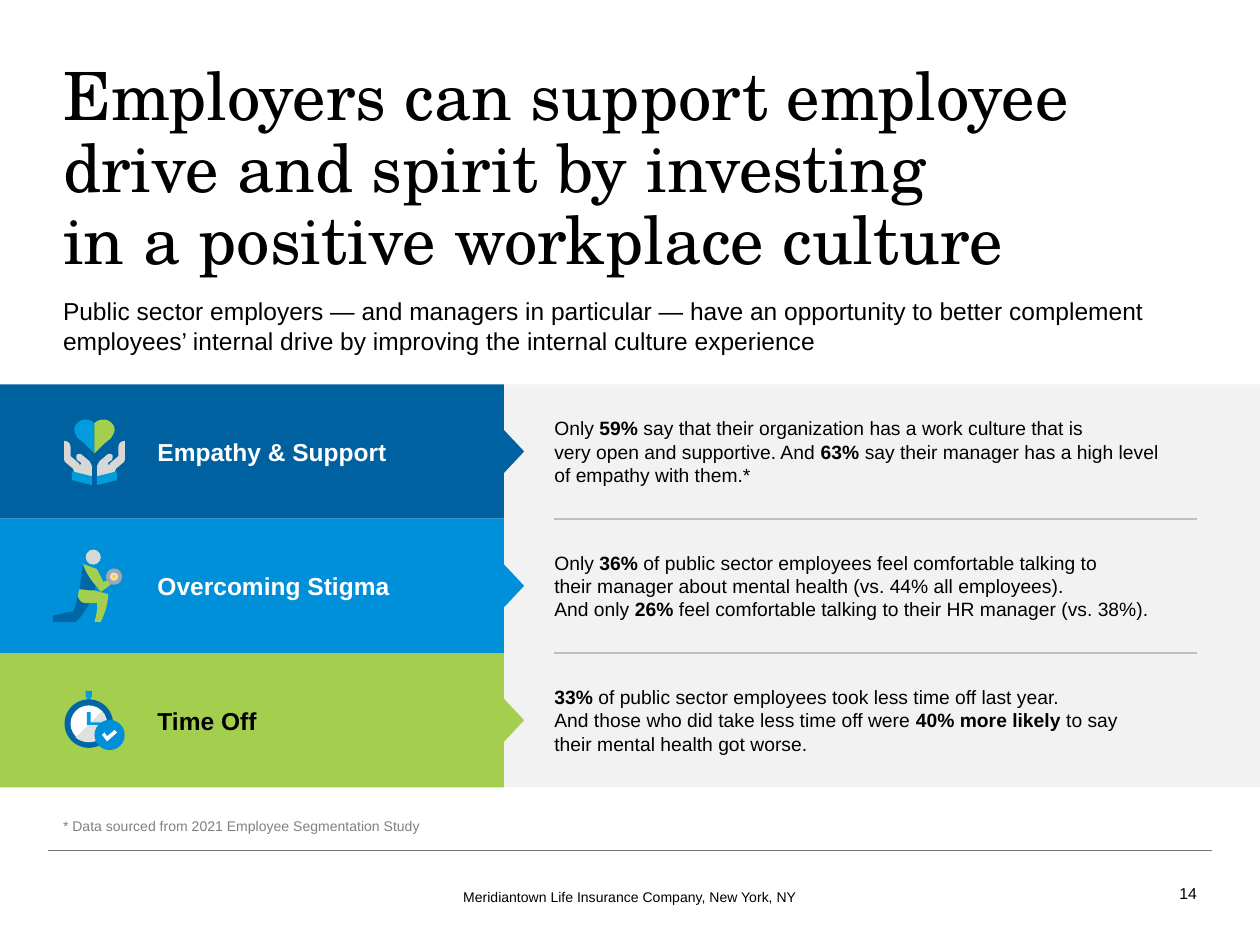
from copy import deepcopy

from pptx import Presentation
from pptx.dml.color import RGBColor
from pptx.enum.shapes import MSO_CONNECTOR, MSO_SHAPE
from pptx.enum.text import MSO_ANCHOR, MSO_AUTO_SIZE, PP_ALIGN
from pptx.oxml.ns import qn
from pptx.util import Inches, Pt

RECTANGLE, TRIANGLE, OVAL = MSO_SHAPE.RECTANGLE, MSO_SHAPE.ISOSCELES_TRIANGLE, MSO_SHAPE.OVAL
TOP, MIDDLE, BOTTOM = MSO_ANCHOR.TOP, MSO_ANCHOR.MIDDLE, MSO_ANCHOR.BOTTOM
LEFT, CENTER, RIGHT = PP_ALIGN.LEFT, PP_ALIGN.CENTER, PP_ALIGN.RIGHT

BLACK, WHITE = RGBColor(0, 0, 0), RGBColor(255, 255, 255)
NAVY, BLUE, GREEN = RGBColor(0, 0x61, 0xA0), RGBColor(0, 0x90, 0xDA), RGBColor(0xA4, 0xCE, 0x4E)
ICON_NAVY, ICON_SKY = RGBColor(0, 0x66, 0xA6), RGBColor(0, 0x9C, 0xDC)
SILVER, PALE = RGBColor(0xD7, 0xD8, 0xD6), RGBColor(0xDF, 0xE1, 0xDF)
STEEL, YELLOW = RGBColor(0xA4, 0xA7, 0xA9), RGBColor(0xFF, 0xDA, 0x02)
PANEL, DIVIDER = RGBColor(0xF2, 0xF2, 0xF2), RGBColor(0xBF, 0xBF, 0xBF)
RULE, NOTE = RGBColor(0x75, 0x78, 0x7B), RGBColor(0x80, 0x80, 0x80)

SANS, SERIF = "Arial", "TeX Gyre Schola"
SLIDE_W, SLIDE_H, MARGIN = 10, 7.5, 0.5
CONTENT_W = SLIDE_W - 2 * MARGIN
BAND_W, BANDS_TOP, BANDS_H = 0.4 * SLIDE_W, 3.05, 3.2
ROW_H = BANDS_H / 3
LABEL_X, FINDING_X = 1.25, 4.4

TITLE = ("Employers can support employee drive and spirit by investing\n"
         "in a positive workplace culture")
SUBTITLE = ("Public sector employers — and managers in particular — have an opportunity to "
            "better complement employees’ internal drive by improving the internal culture experience")
FOOTNOTE = "* Data sourced from 2021 Employee Segmentation Study"

# Icon outlines, in hundredths of an inch from the slide's left edge and the row's top;
# a pair is a corner, six numbers are a cubic curve
HALF_HEART = [(76, 54), (83, 47), (88, 43), (89, 41, 91, 39, 91, 36), (91, 32, 87, 28, 82, 28),
              (80, 28, 77, 29, 76, 30), (75, 31), (75, 55)]
HAND = [(94, 50), (94, 57), (87, 63), (87, 64), (86, 64, 85, 63, 86, 62), (89, 60),
        (89, 59, 90, 57, 89, 56), (88, 55, 86, 55, 85, 56), (79, 61), (78, 63, 77, 64, 77, 66),
        (77, 79), (91, 75), (91, 70), (91, 69, 92, 68, 92, 67), (98, 62),
        (98, 62, 99, 61, 99, 60), (99, 45), (96, 45, 94, 47, 94, 50)]
CUFF = [(93, 69), (77, 73), (77, 80), (93, 76)]
BACK = [(63, 57), (64, 56), (75, 57), (76, 53), (68, 44, 66, 36, 66, 36)]
REAR_LEG = [(68, 67), (65, 67, 63, 65, 62, 62), (62, 60), (60, 70, 58, 74, 58, 74), (55, 74),
            (42, 77), (42, 82), (60, 82), (60, 82, 66, 77, 71, 67)]
ARM = [(85, 49), (84, 49, 83, 50, 82, 50), (77, 40), (66, 36), (66, 36, 68, 44, 76, 53),
       (80, 58), (83, 56, 86, 54, 88, 52)]
FRONT_LEG = [(71, 57), (63, 56), (62, 60), (62, 62), (63, 65, 65, 67, 68, 67), (77, 67),
             (77, 67, 78, 72, 75, 82), (80, 82), (86, 70, 86, 60, 86, 60), (75, 57)]
WATCH_STEM = [(73, 30), (68, 30), (68, 35), (69, 35), (69, 42), (72, 42), (72, 35), (73, 35)]
WATCH_SHADE = [(81, 67), (86, 61, 86, 52, 81, 46), (60, 67), (66, 72, 75, 72, 81, 67)]
WATCH_HANDS = [(80, 57), (69, 57), (69, 47), (72, 47), (72, 55), (80, 55)]
CHECK = [(85, 70), (81, 65), (83, 63), (85, 66), (91, 61), (93, 63)]


def paint(shape, color):
    shape.fill.solid()
    shape.fill.fore_color.rgb = color
    shape.line.fill.background()
    shape.shadow.inherit = False


def add_block(shapes, kind, x, y, w, h, color):
    block = shapes.add_shape(kind, Inches(x), Inches(y), Inches(w), Inches(h))
    paint(block, color)
    return block


def add_rule(slide, x1, x2, y, color, width):
    rule = slide.shapes.add_connector(MSO_CONNECTOR.STRAIGHT, Inches(x1), Inches(y),
                                      Inches(x2), Inches(y))
    rule.line.color.rgb = color
    rule.line.width = Pt(width)
    rule._element.spPr.get_or_add_ln().addnext(rule._element.makeelement(qn("a:effectLst"), {}))


def write(holder, box, text, size, color=BLACK, font=SANS, anchor=MIDDLE, align=LEFT,
          bold=False, spacing=1.0):
    """Place a text holder and fill it; ** switches bold on and off."""
    holder.left, holder.top, holder.width, holder.height = map(Inches, box)
    frame = holder.text_frame
    frame.word_wrap, frame.auto_size = True, MSO_AUTO_SIZE.NONE
    frame.margin_left = frame.margin_right = frame.margin_top = frame.margin_bottom = 0
    frame.vertical_anchor = anchor
    paragraph = frame.paragraphs[0]
    paragraph.alignment, paragraph.line_spacing = align, spacing
    paragraph.space_before = Pt(0)
    for part, chunk in enumerate(text.split("**")):
        for number, line in enumerate(chunk.split("\n")):
            if number:
                paragraph.add_line_break()
            if line:
                run = paragraph.add_run()
                run.text = line
                run.font.name, run.font.size = font, Pt(size)
                run.font.bold = bold or part % 2 == 1
                run.font.color.rgb = color
    # Line breaks need the text size too, or they stretch their lines
    for line_break in paragraph._p.findall(qn("a:br")):
        line_break.append(deepcopy(paragraph.runs[0].font._element))


def add_text(slide, box, text, size, **style):
    write(slide.shapes.add_textbox(0, 0, 0, 0), box, text, size, **style)


def flatten(outline, steps=8):
    points = []
    for node in outline:
        if len(node) == 2:
            points.append(node)
            continue
        curve = [points[-1], node[:2], node[2:4], node[4:]]
        for step in range(1, steps + 1):
            t = step / steps
            weights = ((1 - t) ** 3, 3 * t * (1 - t) ** 2, 3 * t * t * (1 - t), t ** 3)
            points.append(tuple(sum(w * p[axis] for w, p in zip(weights, curve))
                                for axis in (0, 1)))
    return points


def add_outline(icon, top, outline, color, mirrored=False):
    points = [(Inches((150 - x if mirrored else x) / 100), Inches(top + y / 100))
              for x, y in flatten(outline)]
    builder = icon.shapes.build_freeform(*points[0], scale=1.0)
    builder.add_line_segments(points[1:], close=True)
    paint(builder.convert_to_shape(), color)


def add_disc(icon, top, x, y, size, color):
    add_block(icon.shapes, OVAL, (x - size / 2) / 100, top + (y - size / 2) / 100,
              size / 100, size / 100, color)


def draw_heart_in_hands(icon, top):
    for mirrored, heart_color in ((True, ICON_SKY), (False, GREEN)):
        add_outline(icon, top, HAND, SILVER, mirrored)
        add_outline(icon, top, CUFF, ICON_SKY, mirrored)
        add_outline(icon, top, HALF_HEART, heart_color, mirrored)


def draw_athlete(icon, top):
    add_outline(icon, top, BACK, ICON_NAVY)
    add_outline(icon, top, REAR_LEG, ICON_NAVY)
    add_disc(icon, top, 74, 30.5, 12, SILVER)
    add_outline(icon, top, ARM, GREEN)
    add_outline(icon, top, FRONT_LEG, GREEN)
    for size, color in ((13, STEEL), (6.5, PALE), (3, YELLOW)):
        add_disc(icon, top, 90.5, 46, size, color)


def draw_stopwatch(icon, top):
    add_outline(icon, top, WATCH_STEM, ICON_SKY)
    add_disc(icon, top, 70.5, 56, 38.5, ICON_NAVY)
    add_disc(icon, top, 70.5, 56, 29, WHITE)
    add_outline(icon, top, WATCH_SHADE, PALE)
    add_outline(icon, top, WATCH_HANDS, ICON_SKY)
    add_disc(icon, top, 87, 65, 24, BLUE)
    add_outline(icon, top, CHECK, WHITE)


TOPICS = [
    ("Empathy & Support", NAVY, WHITE, draw_heart_in_hands,
     "Only **59%** say that their organization has a work culture that is\n"
     "very open and supportive. And **63%** say their manager has a high level\n"
     "of empathy with them.*"),
    ("Overcoming Stigma", BLUE, WHITE, draw_athlete,
     "Only **36%** of public sector employees feel comfortable talking to\n"
     "their manager about mental health (vs. 44% all employees).\n"
     "And only **26%** feel comfortable talking to their HR manager (vs. 38%)."),
    ("Time Off", GREEN, BLACK, draw_stopwatch,
     "**33%** of public sector employees took less time off last year.\n"
     "And those who did take less time off were **40% more likely** to say\n"
     "their mental health got worse."),
]


def add_topic(slide, row, label, band_color, label_color, draw_icon, finding):
    top = BANDS_TOP + row * ROW_H
    middle = top + ROW_H / 2
    add_block(slide.shapes, RECTANGLE, 0, top, BAND_W, ROW_H, band_color)
    pointer = add_block(slide.shapes, TRIANGLE, BAND_W - 0.09, middle - 0.08, 0.34, 0.16, band_color)
    pointer.rotation = 90
    add_text(slide, (LABEL_X, middle - 0.12, 2.5, 0.24), label, 14, color=label_color, bold=True)
    add_text(slide, (FINDING_X, middle - 0.28, SLIDE_W - MARGIN - FINDING_X, 0.56), finding, 11)
    if row:
        add_rule(slide, FINDING_X, SLIDE_W - MARGIN, top, DIVIDER, 1)
    draw_icon(slide.shapes.add_group_shape(), top)


def main():
    deck = Presentation()
    deck.slide_width, deck.slide_height = Inches(SLIDE_W), Inches(SLIDE_H)
    slide = deck.slides.add_slide(deck.slide_layouts.get_by_name("Comparison"))
    title, subtitle, left_content, footnote, right_content = slide.placeholders
    for unused in (left_content, right_content):
        unused.element.getparent().remove(unused.element)

    # Heading and footnote
    write(title, (MARGIN, 0.5, CONTENT_W, 1.01), TITLE, 38, font=SERIF, anchor=TOP, spacing=0.9)
    write(subtitle, (MARGIN, 2.35, CONTENT_W, 0.43), SUBTITLE, 14, anchor=TOP)
    write(footnote, (MARGIN, 6.25, CONTENT_W, 0.37), FOOTNOTE, 8, color=NOTE, anchor=BOTTOM)

    # Topic rows
    add_block(slide.shapes, RECTANGLE, BAND_W, BANDS_TOP, SLIDE_W - BAND_W, BANDS_H, PANEL)
    for row, topic in enumerate(TOPICS):
        add_topic(slide, row, *topic)

    # Footer
    add_rule(slide, 0.38, SLIDE_W - 0.38, 0.9 * SLIDE_H, RULE, 0.75)
    add_text(slide, (3.56, 7, 2.88, 0.24), "Meridiantown Life Insurance Company, New York, NY", 8,
             align=CENTER)
    add_text(slide, (9.2, 6.96, 0.3, 0.25), "14", 9, align=RIGHT)
    deck.save("out.pptx")


if __name__ == "__main__":
    main()
